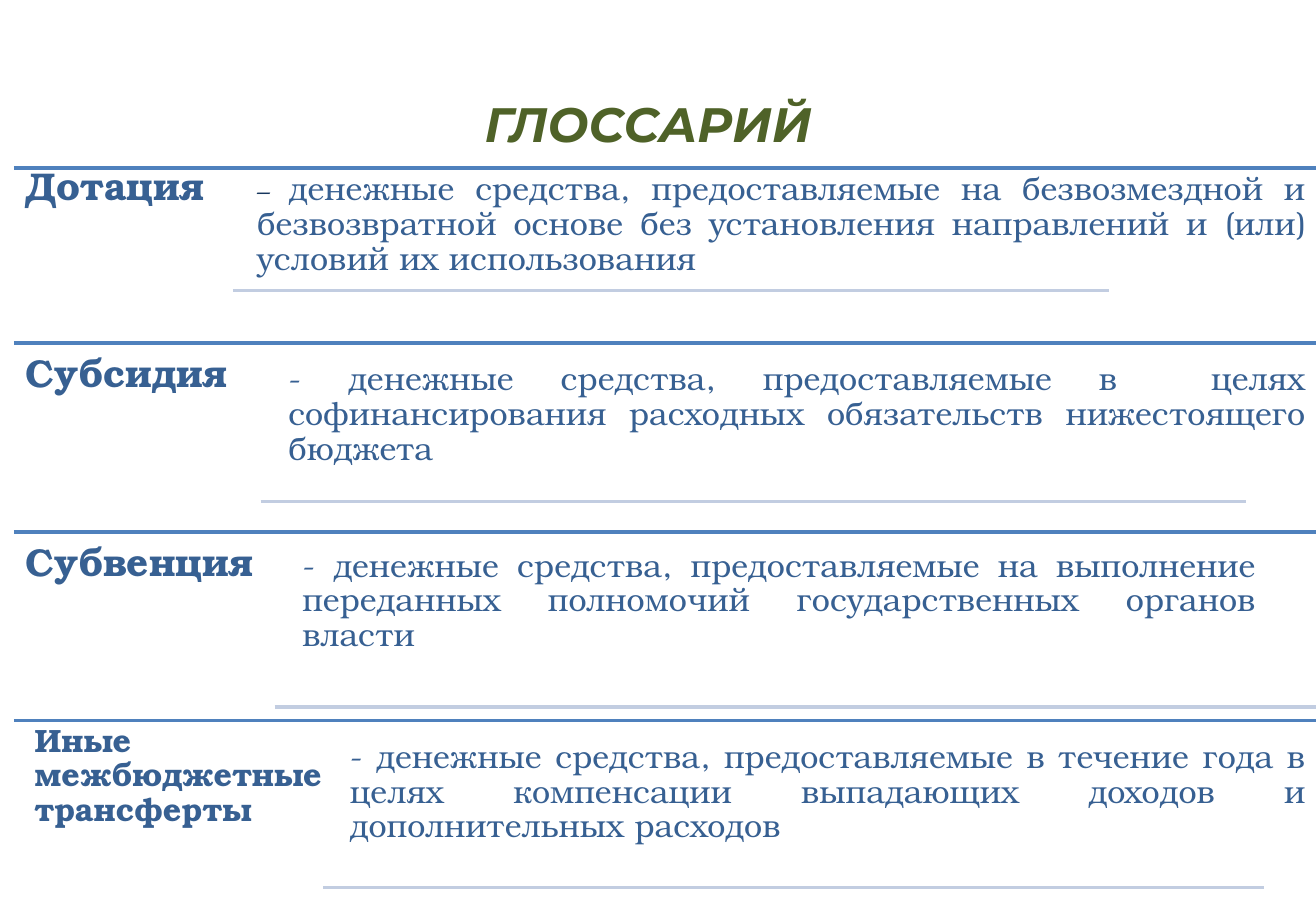
import pptx
import pptx.util
import pptx.dml.color
import pptx.enum.shapes
import pptx.enum.text
import lxml.etree

Inches, Pt = pptx.util.Inches, pptx.util.Pt
ALIGN = pptx.enum.text.PP_ALIGN

COLORS = {"text": "376092", "dash": "17375E", "title": "4F6228",
          "rule": "4F81BD", "underline": "C2CDE1"}
WIDTH, HEIGHT, LEFT = 11.36, 7.93, 0.12

# Each entry: rule y, term, term size, term box, definition runs, definition box, underline
GLOSSARY = [
    (1.45, "Дотация", 24, (0.12, 1.34, 1.89, 1.63),
     [("– ", 16, "dash"),
      ("денежные средства, предоставляемые на безвозмездной и безвозвратной основе "
       "без установления направлений и (или) условий их использования", 20, "text")],
     (2.15, 1.42, 9.19, 1.09), 0.07, (2.01, 9.57, 2.51)),
    (2.96, "Субсидия", 24, (0.12, 2.96, 2.13, 1.63),
     [("- денежные средства, предоставляемые в  целях софинансирования расходных "
       "обязательств нижестоящего бюджета", 20, "text")],
     (2.41, 3.05, 8.94, 1.28), 0.08, (2.25, 10.76, 4.33)),
    (4.59, "Субвенция", 24, (0.12, 4.59, 2.25, 1.63),
     [("- денежные средства, предоставляемые на выполнение переданных полномочий "
       "государственных органов власти", 20, "text")],
     (2.53, 4.66, 8.39, 1.22), 0.08, (2.37, WIDTH, 6.1)),
    (6.22, "Иные межбюджетные трансферты", 20, (0.22, 6.17, 2.66, 1.57),
     [("- денежные средства, предоставляемые в течение года в целях компенсации "
       "выпадающих доходов и дополнительных расходов", 20, "text")],
     (2.94, 6.31, 8.41, 1.36), 0.08, (2.79, 10.91, 7.66)),
]


class GlossarySlide:
    """Holds the style and the current slide, and draws its elements."""

    font = "TeX Gyre Bonum"
    title_font = "Montserrat"

    def __init__(self, prs):
        self.s = prs.slides.add_slide(prs.slide_layouts[5])

    def color(self, name):
        return pptx.dml.color.RGBColor.from_string(COLORS[name])

    def title(self, text, box):
        sp = self.s.shapes.title
        sp.left, sp.top, sp.width, sp.height = map(Inches, box)
        tf = sp.text_frame
        tf.text = text
        tf.auto_size = pptx.enum.text.MSO_AUTO_SIZE.NONE
        tf.vertical_anchor = pptx.enum.text.MSO_ANCHOR.TOP
        p = tf.paragraphs[0]
        p.alignment = ALIGN.CENTER
        p.line_spacing = Pt(49.4)
        p.font.name, p.font.size = self.title_font, Pt(30)
        p.font.bold = p.font.italic = True
        p.font.color.rgb = self.color("title")

    def line(self, x1, x2, y, color):
        sp = self.s.shapes.add_connector(
            pptx.enum.shapes.MSO_CONNECTOR.STRAIGHT,
            Inches(x1), Inches(y), Inches(x2), Inches(y))
        sp.line.color.rgb = self.color(color)
        sp.line.width = Pt(2)
        lxml.etree.SubElement(sp._element.spPr, pptx.oxml.ns.qn("a:effectLst"))

    def text(self, runs, box, inset, align=ALIGN.LEFT, bold=False):
        tf = self.s.shapes.add_textbox(*map(Inches, box)).text_frame
        tf.word_wrap = True
        tf.margin_left = tf.margin_right = Inches(inset)
        tf.margin_top = tf.margin_bottom = Inches(inset)
        p = tf.paragraphs[0]
        p.alignment = align
        p.line_spacing = 0.9
        p.font.name, p.font.bold = self.font, bold
        for text, size, color in runs:
            r = p.add_run()
            r.text = text
            r.font.size = Pt(size)
            r.font.color.rgb = self.color(color)


def main():
    prs = pptx.Presentation()
    prs.slide_width, prs.slide_height = Inches(WIDTH), Inches(HEIGHT)
    slide = GlossarySlide(prs)
    slide.title("ГЛОССАРИЙ", (2.86, 0.58, 5.47, 0.73))
    for y, term, size, term_box, definition, box, inset, underline in GLOSSARY:
        slide.line(LEFT, WIDTH, y, "rule")
        slide.text([(term, size, "text")], term_box, 0.1 if size == 24 else 0.08, bold=True)
        slide.text(definition, box, inset, ALIGN.JUSTIFY)
        slide.line(*underline, "underline")
    prs.save("out.pptx")


if __name__ == "__main__":
    main()
